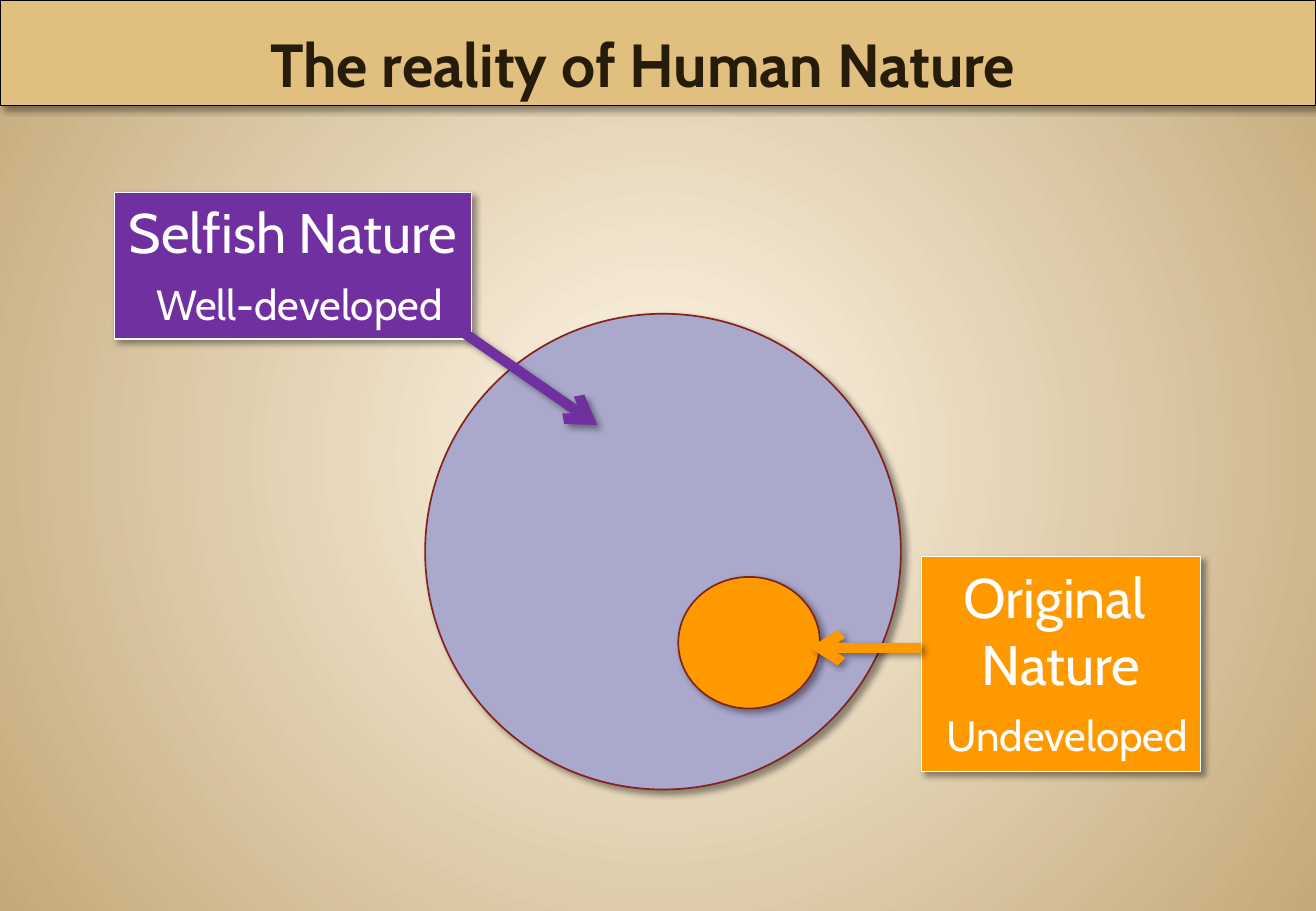
import dataclasses

import lxml.etree
import pptx
import pptx.dml.color
import pptx.enum.shapes
import pptx.enum.text
import pptx.oxml.ns
import pptx.util

EMU_PER_PX = 7620
SHAPES = pptx.enum.shapes.MSO_SHAPE
ANCHORS = pptx.enum.text.MSO_ANCHOR


@dataclasses.dataclass(frozen=True)
class Theme:
    font: str = "Cabin"
    title_size: int = 36
    label_size: int = 33
    detail_size: int = 25
    glow: str = "FFF7E8"
    sand: str = "C4AA7A"
    banner: str = "E1BF7E"
    title: str = "261C09"
    black: str = "000000"
    white: str = "FFFFFF"
    selfish: str = "7030A0"
    original: str = "FF9900"
    person: str = "AAA8CB"
    outline: str = "80221D"


def px(length):
    return pptx.util.Emu(length * EMU_PER_PX)


def rgb(color):
    return pptx.dml.color.RGBColor.from_string(color)


def add_element(parent, tag, **attributes):
    return lxml.etree.SubElement(parent, pptx.oxml.ns.qn(tag), **attributes)


def write(paragraph, text, font, size, color, bold=False):
    paragraph.alignment = pptx.enum.text.PP_ALIGN.CENTER
    run = paragraph.add_run()
    run.text = text
    run.font.name = font
    run.font.size = pptx.util.Pt(size)
    run.font.bold = bold
    run.font.color.rgb = rgb(color)


class Canvas:
    def __init__(self, slide, theme):
        self.slide = slide
        self.theme = theme

    def background(self):
        fill = self.slide.background.fill
        fill.gradient()
        for stop, color in zip(fill.gradient_stops, (self.theme.glow, self.theme.sand)):
            stop.color.rgb = rgb(color)
        gradient = self.slide.element.find(".//" + pptx.oxml.ns.qn("a:gradFill"))
        gradient.remove(gradient.find(pptx.oxml.ns.qn("a:lin")))
        radial = add_element(gradient, "a:path", path="circle")
        add_element(radial, "a:fillToRect", l="50000", t="50000", r="50000", b="50000")

    def shadow(self, effects):
        outer = add_element(effects, "a:outerShdw", blurRad="50800", dist="38100",
                            dir="2700000", algn="tl", rotWithShape="0")
        color = add_element(outer, "a:srgbClr", val=self.theme.black)
        add_element(color, "a:alpha", val="40000")

    def shape(self, kind, box, fill, line, line_width=0.75):
        shape = self.slide.shapes.add_shape(kind, *map(px, box))
        shape.fill.solid()
        shape.fill.fore_color.rgb = rgb(fill)
        shape.line.color.rgb = rgb(line)
        shape.line.width = pptx.util.Pt(line_width)
        shape.shadow.inherit = False
        self.shadow(shape.element.spPr.find(pptx.oxml.ns.qn("a:effectLst")))
        return shape

    def circle(self, box, fill):
        self.shape(SHAPES.OVAL, box, fill, self.theme.outline, 1)

    def banner(self, box, text):
        theme = self.theme
        frame = self.shape(SHAPES.RECTANGLE, box, theme.banner, theme.black).text_frame
        frame.word_wrap = True
        frame.vertical_anchor = ANCHORS.BOTTOM
        frame.margin_right = px(42)
        write(frame.paragraphs[0], text, font=theme.font, size=theme.title_size,
              color=theme.title, bold=True)

    def label(self, box, fill, lines, detail):
        theme = self.theme
        frame = self.shape(SHAPES.RECTANGLE, box, fill, theme.white).text_frame
        frame.word_wrap = False
        frame.auto_size = pptx.enum.text.MSO_AUTO_SIZE.SHAPE_TO_FIT_TEXT
        frame.vertical_anchor = ANCHORS.TOP
        style = {"font": theme.font, "color": theme.white}
        paragraph = frame.paragraphs[0]
        for line in lines:
            write(paragraph, line, size=theme.label_size, **style)
            paragraph = frame.add_paragraph()
        write(paragraph, " ", size=theme.label_size, **style)
        write(paragraph, detail, size=theme.detail_size, **style)

    def arrow(self, start, end, color):
        connector = self.slide.shapes.add_connector(
            pptx.enum.shapes.MSO_CONNECTOR.STRAIGHT, *map(px, start + end))
        connector.line.color.rgb = rgb(color)
        connector.line.width = pptx.util.Pt(6)
        properties = connector.element.spPr
        add_element(properties.find(pptx.oxml.ns.qn("a:ln")), "a:tailEnd", type="arrow")
        self.shadow(add_element(properties, "a:effectLst"))


def main():
    presentation = pptx.Presentation()
    presentation.slide_width = px(1300)
    presentation.slide_height = px(900)
    theme = Theme()
    canvas = Canvas(presentation.slides.add_slide(presentation.slide_layouts[6]), theme)

    canvas.background()
    canvas.label((910, 550, 276, 212), theme.original, ["Original ", "Nature"], "Undeveloped")
    canvas.label((113, 190, 353, 145), theme.selfish, ["Selfish Nature"], "Well-developed")
    canvas.banner((0, 0, 1300, 104), "The reality of Human Nature")
    canvas.circle((420, 310, 470, 470), theme.person)
    canvas.arrow((460, 330), (590, 420), theme.selfish)
    canvas.circle((670, 570, 140, 130), theme.original)
    canvas.arrow((910, 640), (800, 640), theme.original)
    presentation.save("out.pptx")


if __name__ == "__main__":
    main()
